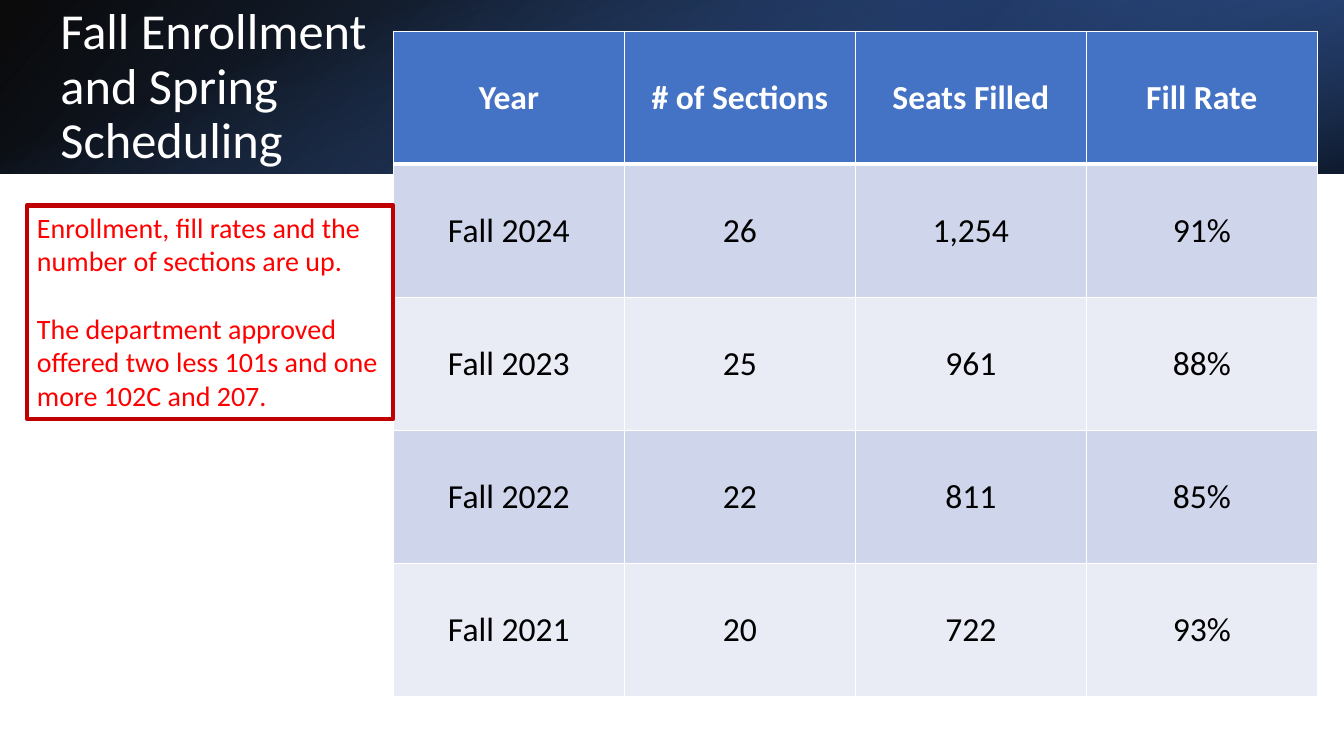
import pptx
import pptx.util
import pptx.oxml
import pptx.oxml.ns
import pptx.dml.color
import pptx.enum.shapes
import pptx.enum.text

Pt = pptx.util.Pt
ALIGN = pptx.enum.text.PP_ALIGN
ANCHOR = pptx.enum.text.MSO_ANCHOR
FONT = "Calibri"

# Content
TITLE = "Fall Enrollment and Spring Scheduling"
NOTES = [
    "Enrollment, fill rates and the number of sections are up.",
    "The department approved offered two less 101s and one more 102C and 207.",
]
ROWS = [
    ("Year", "# of Sections", "Seats Filled", "Fill Rate"),
    ("Fall 2024", "26", "1,254", "91%"),
    ("Fall 2023", "25", "961", "88%"),
    ("Fall 2022", "22", "811", "85%"),
    ("Fall 2021", "20", "722", "93%"),
]
COLORS = {
    "white": "FFFFFF", "black": "000000", "blue": "4472C4",
    "deep": "2F5597", "navy": "203864", "odd": "CFD5EA",
    "even": "E9EBF5", "edge": "C00000", "red": "FF0000",
}

# Layout
WIDE, HIGH, BAND = 960, 540, 124
MID = (WIDE - BAND) / 2
# box, rotation, flipped, angle, stops of (position, colour, opacity)
LAYERS = [
    ((0, 0, WIDE, BAND), 0, True, 140,
     [(0, "black", 96), (100, "deep", 100)]),
    ((WIDE * 2 / 3, 0, WIDE / 3, BAND), 180, True, 320,
     [(19, "navy", 68), (100, "blue", 79)]),
    ((MID, -MID, BAND, WIDE), 90, False, 340,
     [(23, "blue", 0), (99, "black", 74)]),
]
TITLE_BOX = (36, 4.4, 265, 117)
TABLE_BOX = (281, 22.3, 660, 475.5)
NOTE_BOX = (19.3, 146.6, 261.5, 152.6)


def rgb(name):
    return pptx.dml.color.RGBColor.from_string(COLORS[name])


def place(box):
    return [Pt(v) for v in box]


def style(para, size, color, align, bold=False):
    para.alignment = align
    for run in para.runs:
        font = run.font
        font.name, font.size, font.bold = FONT, Pt(size), bold
        font.color.rgb = rgb(color)


def add_rect(slide, box):
    rect = slide.shapes.add_shape(
        pptx.enum.shapes.MSO_SHAPE.RECTANGLE, *place(box))
    rect.shadow.inherit = False
    return rect


def shade(shape, angle, stops):
    marks = "".join(
        f'<a:gs pos="{pos * 1000}"><a:srgbClr val="{COLORS[name]}">'
        f'<a:alpha val="{alpha * 1000}"/></a:srgbClr></a:gs>'
        for pos, name, alpha in stops)
    grad = pptx.oxml.parse_xml(
        f'<a:gradFill {pptx.oxml.ns.nsdecls("a")} rotWithShape="1">'
        f'<a:gsLst>{marks}</a:gsLst>'
        f'<a:lin ang="{angle * 60000}" scaled="0"/></a:gradFill>')
    shape.element.spPr.prstGeom.addnext(grad)


def add_edge(cell, side, width):
    cell._tc.get_or_add_tcPr().append(pptx.oxml.parse_xml(
        f'<a:ln{side} {pptx.oxml.ns.nsdecls("a")} w="{Pt(width)}">'
        f'<a:solidFill><a:srgbClr val="{COLORS["white"]}"/></a:solidFill>'
        f'</a:ln{side}>'))


def add_band(slide):
    for box, turn, flip, angle, stops in LAYERS:
        rect = add_rect(slide, box)
        rect.rotation = turn
        rect.line.fill.background()
        if flip:
            rect.element.spPr.xfrm.set("flipH", "1")
        shade(rect, angle, stops)


def add_title(slide):
    title = slide.shapes.title
    title.left, title.top, title.width, title.height = place(TITLE_BOX)
    frame = title.text_frame
    frame.text = TITLE
    frame.word_wrap = True
    frame.auto_size = pptx.enum.text.MSO_AUTO_SIZE.NONE
    frame.vertical_anchor = ANCHOR.MIDDLE
    frame.paragraphs[0].line_spacing = 0.9
    style(frame.paragraphs[0], 36, "white", ALIGN.LEFT)
    # Bring the title in front of the band
    slide.shapes.element.append(title.element)


def add_grid(slide):
    count, cols = len(ROWS), len(ROWS[0])
    table = slide.shapes.add_table(count, cols, *place(TABLE_BOX)).table
    for col in table.columns:
        col.width = Pt(TABLE_BOX[2] / cols)
    for r, row in enumerate(ROWS):
        table.rows[r].height = Pt(TABLE_BOX[3] / count)
        head = r == 0
        fill = "blue" if head else ("odd" if r % 2 else "even")
        for c, text in enumerate(row):
            cell = table.cell(r, c)
            for side in "LRTB":
                thick = (r, side) in ((0, "B"), (1, "T"))
                add_edge(cell, side, 3 if thick else 1)
            cell.fill.solid()
            cell.fill.fore_color.rgb = rgb(fill)
            cell.vertical_anchor = ANCHOR.MIDDLE
            cell.text_frame.text = text
            style(cell.text_frame.paragraphs[0], 24,
                  "white" if head else "black", ALIGN.CENTER, head)


def add_note(slide):
    note = add_rect(slide, NOTE_BOX)
    note.fill.solid()
    note.fill.fore_color.rgb = rgb("white")
    note.line.color.rgb = rgb("edge")
    note.line.width = Pt(3.25)
    frame = note.text_frame
    frame.word_wrap = True
    frame.vertical_anchor = ANCHOR.TOP
    frame.text = "\n".join(NOTES)
    for para in frame.paragraphs:
        style(para, 20, "red", ALIGN.LEFT)
    frame.paragraphs[1].space_before = Pt(24)


def main():
    deck = pptx.Presentation()
    deck.slide_width, deck.slide_height = Pt(WIDE), Pt(HIGH)
    slide = deck.slides.add_slide(deck.slide_layouts[5])
    add_band(slide)
    add_title(slide)
    add_grid(slide)
    add_note(slide)
    deck.save("out.pptx")


if __name__ == "__main__":
    main()
